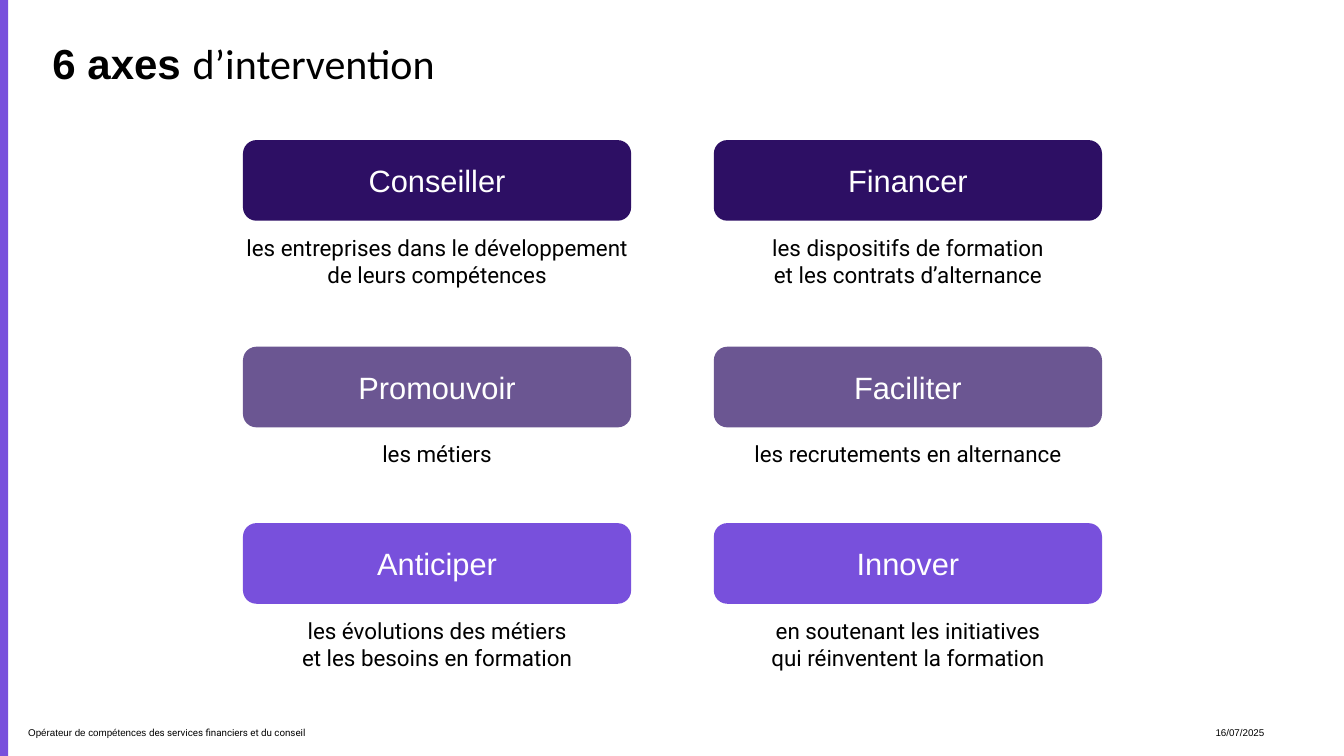
from lxml import etree
from pptx import Presentation
from pptx.dml.color import RGBColor
from pptx.enum.shapes import MSO_SHAPE
from pptx.enum.text import MSO_ANCHOR, MSO_AUTO_SIZE, PP_ALIGN
from pptx.oxml.ns import qn
from pptx.util import Inches, Pt

RECTANGLE, ROUNDED = MSO_SHAPE.RECTANGLE, MSO_SHAPE.ROUNDED_RECTANGLE
TOP, MIDDLE = MSO_ANCHOR.TOP, MSO_ANCHOR.MIDDLE
LEFT, CENTER, RIGHT = PP_ALIGN.LEFT, PP_ALIGN.CENTER, PP_ALIGN.RIGHT
NO_FIT = MSO_AUTO_SIZE.NONE

COLORS = {"night": "2D0F64", "violet": "7850DC", "text": "000000", "white": "FFFFFF"}
WIDTH, HEIGHT = 13.33, 7.5
GRID_LEFT, COLUMN_STEP = 2.41, 4.67
CARD_WIDTH, CARD_HEIGHT, LINE_HEIGHT = 3.85, 0.8, 0.27
DETAIL_OFFSET = 0.93
FOOTER_TOP, FOOTER_HEIGHT = 7.1, 0.33

ROWS = [
    (1.39, "night", 100, [
        ("Conseiller", ["les entreprises dans le développement de leurs compétences"], 2),
        ("Financer", ["les dispositifs de formation", "et les contrats d’alternance"], 2),
    ]),
    (3.44, "night", 70, [
        ("Promouvoir", ["les métiers"], 1),
        ("Faciliter", ["les recrutements en alternance"], 1),
    ]),
    (5.19, "violet", 100, [
        ("Anticiper", ["les évolutions des métiers", "et les besoins en formation"], 2),
        ("Innover", ["en soutenant les initiatives", "qui réinventent la formation"], 2),
    ]),
]


def rgb(name):
    return RGBColor.from_string(COLORS[name])


def set_font(font, size, face, color="text", bold=False):
    font.size = Pt(size)
    font.name = face
    font.bold = bold
    font.color.rgb = rgb(color)


def set_frame(frame, anchor, left_inset=0):
    frame.word_wrap = True
    frame.auto_size = NO_FIT
    frame.vertical_anchor = anchor
    frame.margin_left = Inches(left_inset)
    frame.margin_top = frame.margin_right = frame.margin_bottom = 0


def add_panel(slide, kind, area, color, opacity=100):
    panel = slide.shapes.add_shape(kind, *map(Inches, area))
    panel.shadow.inherit = False
    panel.fill.solid()
    panel.fill.fore_color.rgb = rgb(color)
    panel.line.fill.background()
    if opacity < 100:
        fill_color = panel.fill._xPr.find(qn("a:solidFill"))[0]
        etree.SubElement(fill_color, qn("a:alpha")).set("val", str(opacity * 1000))
    return panel


def write_lines(frame, lines, size, face, color="text", align=CENTER):
    for index, line in enumerate(lines):
        para = frame.add_paragraph() if index else frame.paragraphs[0]
        para.text = line
        para.alignment = align
        set_font(para.font, size, face, color)


def write_spans(para, spans, size):
    para.alignment = LEFT
    for words, face, bold in spans:
        span = para.add_run()
        span.text = words
        set_font(span.font, size, face, bold=bold)


def add_text(slide, area, anchor=TOP, left_inset=0):
    box = slide.shapes.add_textbox(*map(Inches, area))
    set_frame(box.text_frame, anchor, left_inset)
    return box.text_frame


def add_title(slide):
    title = slide.shapes.title
    title.left, title.top = Inches(0.52), Inches(0.37)
    title.width, title.height = Inches(10.86), Inches(0.5)
    set_frame(title.text_frame, TOP)
    spans = [("6 axes ", "Arial", True), ("d’intervention", "Calibri", False)]
    write_spans(title.text_frame.paragraphs[0], spans, 30)


def add_card(slide, column, top, color, opacity, name, details, line_count):
    left = GRID_LEFT + column * COLUMN_STEP
    panel = add_panel(slide, ROUNDED, (left, top, CARD_WIDTH, CARD_HEIGHT), color, opacity)
    set_frame(panel.text_frame, MIDDLE)
    write_lines(panel.text_frame, [name], 22, "Arial", "white")
    area = (left, top + DETAIL_OFFSET, CARD_WIDTH, line_count * LINE_HEIGHT)
    write_lines(add_text(slide, area), details, 16, "Roboto")


def add_footer(slide):
    mission = add_text(slide, (0.08, FOOTER_TOP, 7.02, FOOTER_HEIGHT), MIDDLE, 0.2)
    spans = [
        ("Opérateur de compétences ", "Arial", False),
        ("des services financiers et du conseil", "Roboto", False),
    ]
    write_spans(mission.paragraphs[0], spans, 7)
    date = add_text(slide, (11.54, FOOTER_TOP, 1, FOOTER_HEIGHT), MIDDLE, 0.2)
    write_lines(date, ["16/07/2025"], 7, "Arial", align=RIGHT)


def main():
    deck = Presentation()
    deck.slide_width, deck.slide_height = Inches(WIDTH), Inches(HEIGHT)
    page = deck.slides.add_slide(deck.slide_layouts[5])
    add_panel(page, RECTANGLE, (0, 0, 0.08, HEIGHT), "violet")
    add_title(page)
    for top, color, opacity, cards in ROWS:
        for column, card in enumerate(cards):
            add_card(page, column, top, color, opacity, *card)
    add_footer(page)
    deck.save("out.pptx")


if __name__ == "__main__":
    main()
